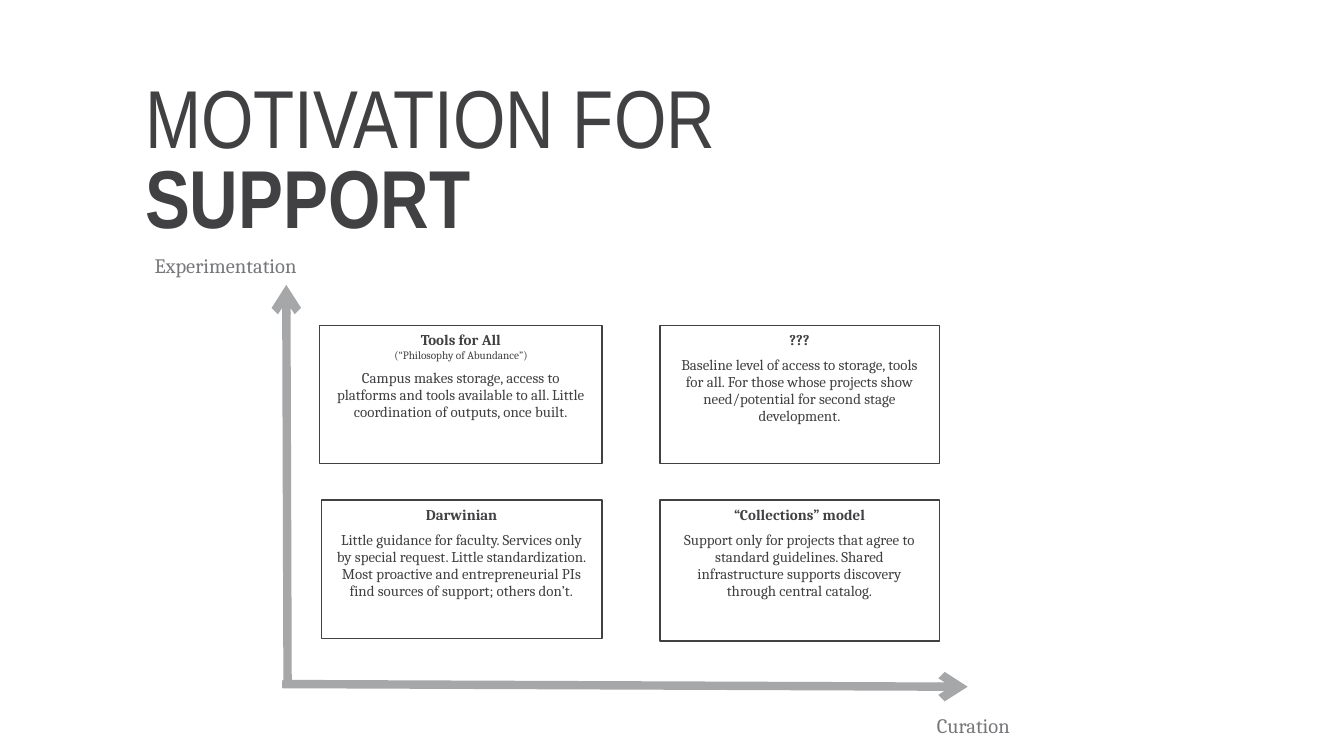
from dataclasses import dataclass

from lxml import etree
from pptx import Presentation
from pptx.dml.color import RGBColor
from pptx.enum.shapes import MSO_CONNECTOR, MSO_SHAPE
from pptx.enum.text import MSO_ANCHOR, PP_ALIGN
from pptx.oxml.ns import qn
from pptx.util import Inches, Pt

LINE = MSO_CONNECTOR.STRAIGHT
RECT = MSO_SHAPE.RECTANGLE
TOP = MSO_ANCHOR.TOP
LEFT = PP_ALIGN.LEFT
MID = PP_ALIGN.CENTER

WIDTH = 10
HEIGHT = WIDTH * 9 / 16


@dataclass(frozen=True)
class Theme:
    dark: RGBColor = RGBColor(0x41, 0x40, 0x42)
    grey: RGBColor = RGBColor(0x77, 0x78, 0x7B)
    axis: RGBColor = RGBColor(0xA6, 0xA7, 0xA9)
    head: str = "Arial Narrow"
    body: str = "Cambria"
    title: float = 44
    label: float = 11
    text: float = 8
    note: float = 6
    gap: float = 4.4


THEME = Theme()

BOXES = [
    (2.38, 2.42, 2.1, 1.03, "Tools for All", "(“Philosophy of Abundance”)",
     "Campus makes storage, access to platforms and tools available to all. "
     "Little coordination of outputs, once built."),
    (4.91, 3.72, 2.08, 1.05, "“Collections” model", "",
     "Support only for projects that agree to standard guidelines. Shared "
     "infrastructure supports discovery through central catalog."),
    (4.91, 2.42, 2.08, 1.03, "???", "",
     "Baseline level of access to storage, tools for all. For those whose "
     "projects show need/potential for second stage development."),
    (2.39, 3.72, 2.09, 1.03, "Darwinian", "",
     "Little guidance for faculty. Services only by special request. Little "
     "standardization. Most proactive and entrepreneurial PIs find sources of "
     "support; others don’t."),
]


def write(para, text, size=THEME.text, font=THEME.body, color=THEME.dark,
          bold=False, align=LEFT, lead=0.95, gap=0):
    para.alignment = align
    para.line_spacing = lead
    para.space_before = Pt(gap)
    run = para.add_run()
    run.text = text
    run.font.size = Pt(size)
    run.font.name = font
    run.font.color.rgb = color
    run.font.bold = bold


def set_frame(shape, left, top, right, foot):
    frame = shape.text_frame
    frame.word_wrap = True
    frame.vertical_anchor = TOP
    frame.margin_left, frame.margin_top = Inches(left), Inches(top)
    frame.margin_right, frame.margin_bottom = Inches(right), Inches(foot)
    return frame


def add_text(slide, x, y, w, h, left=0, pad=0.05):
    box = slide.shapes.add_textbox(Inches(x), Inches(y), Inches(w), Inches(h))
    return set_frame(box, left, pad, 0, pad).paragraphs[0]


def add_title(slide):
    para = add_text(slide, 0.86, 0.63, 4.93, 0.56, left=0.22, pad=0)
    form = dict(size=THEME.title, font=THEME.head, lead=0.81)
    write(para, "MOTIVATION FOR ", **form)
    write(para, "SUPPORT", bold=True, **form)


def add_label(slide, text, x, y, w):
    para = add_text(slide, x, y, w, 0.28)
    write(para, text, size=THEME.label, color=THEME.grey)


def add_axis(slide, x1, y1, x2, y2):
    axis = slide.shapes.add_connector(
        LINE, Inches(x1), Inches(y1), Inches(x2), Inches(y2))
    axis.line.color.rgb = THEME.axis
    axis.line.width = Pt(4.5)
    tip = etree.SubElement(axis.line._get_or_add_ln(), qn("a:tailEnd"))
    tip.set("type", "arrow")
    etree.SubElement(axis._element.spPr, qn("a:effectLst"))


def add_box(slide, x, y, w, h, name, note, text):
    box = slide.shapes.add_shape(
        RECT, Inches(x), Inches(y), Inches(w), Inches(h))
    box.shadow.inherit = False
    box.fill.background()
    box.line.color.rgb = THEME.dark
    box.line.width = Pt(0.75)
    frame = set_frame(box, 0.1, 0.05, 0.1, 0.05)
    write(frame.paragraphs[0], name, bold=True, align=MID)
    if note:
        write(frame.add_paragraph(), note, size=THEME.note, align=MID)
    write(frame.add_paragraph(), text, align=MID, gap=THEME.gap)


def main():
    deck = Presentation()
    deck.slide_width, deck.slide_height = Inches(WIDTH), Inches(HEIGHT)
    slide = deck.slides.add_slide(deck.slide_layouts[6])
    add_title(slide)
    add_axis(slide, 2.1, 5.09, 7.2, 5.11)
    add_axis(slide, 2.14, 5.11, 2.13, 2.12)
    add_label(slide, "Experimentation", 1.15, 1.85, 1.45)
    add_label(slide, "Curation", 6.97, 5.27, 0.81)
    for box in BOXES:
        add_box(slide, *box)
    deck.save("out.pptx")


if __name__ == "__main__":
    main()
